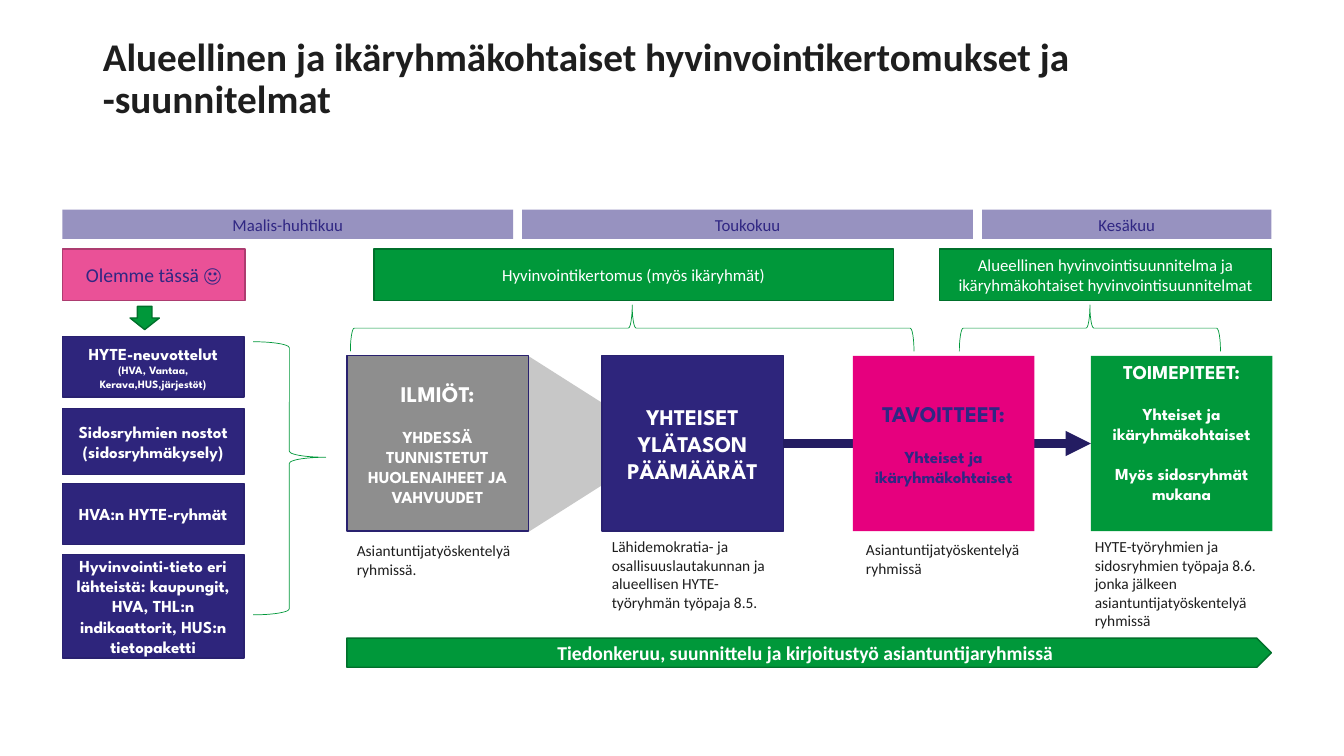
from lxml import etree
from pptx import Presentation
from pptx.dml.color import RGBColor
from pptx.enum.shapes import MSO_CONNECTOR, MSO_SHAPE
from pptx.enum.text import MSO_ANCHOR, MSO_AUTO_SIZE, PP_ALIGN
from pptx.oxml.ns import qn
from pptx.util import Pt

RECT, BRACE = MSO_SHAPE.RECTANGLE, MSO_SHAPE.RIGHT_BRACE
WEDGE, DOWN = MSO_SHAPE.ISOSCELES_TRIANGLE, MSO_SHAPE.DOWN_ARROW
PLATE, STRAIGHT = MSO_SHAPE.PENTAGON, MSO_CONNECTOR.STRAIGHT
LEFT, MID = PP_ALIGN.LEFT, PP_ALIGN.CENTER
CENTER, BOTTOM = MSO_ANCHOR.MIDDLE, MSO_ANCHOR.BOTTOM
FIXED = MSO_AUTO_SIZE.NONE

WHITE = RGBColor(0xFF, 0xFF, 0xFF)
INK = RGBColor(0x1E, 0x1E, 0x1E)
INDIGO = RGBColor(0x30, 0x27, 0x83)
NAVY = RGBColor(0x2E, 0x25, 0x7C)
EDGE = RGBColor(0x29, 0x21, 0x6F)
ARROW = RGBColor(0x24, 0x1D, 0x62)
GREEN = RGBColor(0x00, 0x98, 0x3A)
FOREST = RGBColor(0x00, 0x70, 0x2B)
PINK = RGBColor(0xE6, 0x00, 0x7E)
ROSE = RGBColor(0xEA, 0x51, 0x97)
PLUM = RGBColor(0xAD, 0x3C, 0x70)
GREY = RGBColor(0x8E, 0x8E, 0x8E)
SILVER = RGBColor(0xC7, 0xC7, 0xC7)

BODY, HEAVY = "Calibri", "League Spartan"
PX = 9144  # 100 px to the inch


def px(*vals):
    return [v * PX for v in vals]


def style(para, size, color, face=BODY, bold=False, align=MID):
    para.alignment = align
    font = para.font
    font.size, font.name, font.bold = Pt(size), face, bold
    font.color.rgb = color


def shape(slide, kind, box, fill=None, line=None, width=1):
    item = slide.shapes.add_shape(kind, *px(*box))
    item.shadow.inherit = False
    if fill is None:
        item.fill.background()
    else:
        item.fill.solid()
        item.fill.fore_color.rgb = fill
    if line is None:
        item.line.fill.background()
    else:
        item.line.color.rgb = line
        item.line.width = Pt(width)
    return item


def label(item, rows, color, face=BODY, bold=False, gap=14):
    """Write (text, size) rows, centred, with a gap between them."""
    frame = item.text_frame
    frame.word_wrap = True
    frame.vertical_anchor = CENTER
    for i, (text, size) in enumerate(rows):
        para = frame.add_paragraph() if i else frame.paragraphs[0]
        para.text = text
        style(para, size, color, face, bold)
        if i:
            para.space_before = Pt(gap)


def note(slide, box, text):
    frame = slide.shapes.add_textbox(*px(*box)).text_frame
    frame.word_wrap = True
    para = frame.paragraphs[0]
    para.text = text
    style(para, 11, INK, align=LEFT)


def brace(slide, box, turn=0):
    """Fill the box with a brace; a turned one points up."""
    x, y, w, h = box
    if turn:
        x, y, w, h = x + (w - h) // 2, y + (h - w) // 2, h, w
    item = shape(slide, BRACE, (x, y, w, h), line=GREEN, width=0.5)
    item.rotation = turn
    return item


def heading(slide, box):
    title = slide.shapes.title
    title.left, title.top, title.width, title.height = px(*box)
    frame = title.text_frame
    frame.auto_size, frame.word_wrap = FIXED, True
    frame.vertical_anchor = BOTTOM
    para = frame.paragraphs[0]
    para.text = ("Alueellinen ja ikäryhmäkohtaiset "
                 "hyvinvointikertomukset ja -suunnitelmat")
    para.line_spacing = 0.9
    style(para, 28, INK, bold=True, align=LEFT)


def months(slide, box):
    x, y, w, h = box
    for dx, name, wide in ((0, "Maalis-huhtikuu", 447), (456, "Toukokuu", 447),
                           (912, "Kesäkuu", w - 912)):
        bar = shape(slide, RECT, (x + dx, y, wide, h), INDIGO)
        tint = bar.fill._xPr.find(qn("a:solidFill"))[0]
        etree.SubElement(tint, qn("a:alpha"), val="50000")
        label(bar, [(name, 12)], INDIGO)


def heads(slide, box):
    x, y, w, h = box
    here = shape(slide, RECT, (x, y, 181, h), ROSE, PLUM)
    label(here, [("Olemme tässä ☺", 14)], INDIGO)
    shape(slide, DOWN, (x + 67, y + 57, 29, 23), GREEN, FOREST)
    for dx, wide, text, arm, span in (
            (309, 515, "Hyvinvointikertomus (myös ikäryhmät)", 286, 559),
            (870, w - 870, "Alueellinen hyvinvointisuunnitelma ja "
             "ikäryhmäkohtaiset hyvinvointisuunnitelmat", 890, 259)):
        head = shape(slide, RECT, (x + dx, y, wide, h), GREEN, FOREST)
        label(head, [(text, 12)], WHITE)
        brace(slide, (x + arm, y + 56, span, 46), 270)


def sources(slide, box):
    x, y, w, h = box
    for dy, tall, text, small in (
            (0, 60, "HYTE-neuvottelut ", "(HVA, Vantaa, Kerava,HUS,järjestöt)"),
            (71, 66, "Sidosryhmien nostot (sidosryhmäkysely)", ""),
            (146, 60, "HVA:n HYTE-ryhmät", ""),
            (216, h - 216, "Hyvinvointi-tieto eri lähteistä: kaupungit, HVA, "
             "THL:n indikaattorit, HUS:n tietopaketti", "")):
        card = shape(slide, RECT, (x, y + dy, w, tall), NAVY, EDGE)
        label(card, [(text, 12)], WHITE, HEAVY, True)
        if small:
            run = card.text_frame.paragraphs[0].add_run()
            run.text, run.font.size = small, Pt(8)
    arm = brace(slide, (x + w + 9, y + 5, 72, 271))
    arm.adjustments[1] = 0.423


def link(slide, start, end):
    line = slide.shapes.add_connector(STRAIGHT, 0, 0, 0, 0)
    line.begin_connect(start, 3)
    line.end_connect(end, 1)
    line.line.color.rgb, line.line.width = ARROW, Pt(6)
    etree.SubElement(line.line._get_or_add_ln(), qn("a:tailEnd"), type="triangle")
    etree.SubElement(line._element.spPr, qn("a:effectLst"))


def stages(slide, box):
    x, y, w, h = box
    side = 180

    def stage(dx, rows, fill, edge=None, color=WHITE):
        item = shape(slide, RECT, (x + dx, y, side, h), fill, edge)
        label(item, rows, color, HEAVY, True)
        return item

    wedge = shape(slide, WEDGE, (x + 162, y + 19, h, 137), SILVER)
    wedge.rotation = 90
    stage(0, [("ILMIÖT:", 16), ("YHDESSÄ TUNNISTETUT HUOLENAIHEET JA "
                                "VAHVUUDET", 12)], GREY, EDGE)
    aims = stage(253, [("YHTEISET YLÄTASON PÄÄMÄÄRÄT", 16)], NAVY, EDGE)
    acts = stage(w - side, [("TOIMEPITEET:", 14),
                            ("Yhteiset ja ikäryhmäkohtaiset", 12),
                            ("Myös sidosryhmät mukana", 12)], GREEN)
    acts.text_frame.margin_bottom = 28 * PX
    link(slide, aims, acts)
    stage(502, [("TAVOITTEET:", 16), ("Yhteiset ja ikäryhmäkohtaiset", 12)],
          PINK, color=INDIGO)
    for dx, dy, wide, tall, text in (
            (0, 5, 185, 47, "Asiantuntijatyöskentelyä ryhmissä."),
            (253, 1, 180, 84, "Lähidemokratia- ja osallisuuslautakunnan ja "
             "alueellisen HYTE-työryhmän työpaja 8.5."),
            (505, 4, 185, 47, "Asiantuntijatyöskentelyä ryhmissä"),
            (732, 1, 186, 103, "HYTE-työryhmien ja sidosryhmien työpaja 8.6. "
             "jonka jälkeen asiantuntijatyöskentelyä ryhmissä")):
        note(slide, (x + dx, y + h + dy, wide, tall), text)


def banner(slide, box):
    bar = shape(slide, PLATE, box, GREEN, FOREST)
    label(bar, [("Tiedonkeruu, suunnittelu ja kirjoitustyö "
                 "asiantuntijaryhmissä", 14)], WHITE, bold=True)


def main():
    deck = Presentation()
    deck.slide_width, deck.slide_height = px(1333, 750)
    slide = deck.slides.add_slide(deck.slide_layouts[5])
    heading(slide, (92, 40, 1150, 86))
    months(slide, (62, 208, 1199, 29))
    heads(slide, (62, 247, 1199, 51))
    sources(slide, (62, 334, 180, 319))
    stages(slide, (344, 353, 918, 174))
    banner(slide, (344, 633, 917, 29))
    deck.save("out.pptx")


if __name__ == "__main__":
    main()
